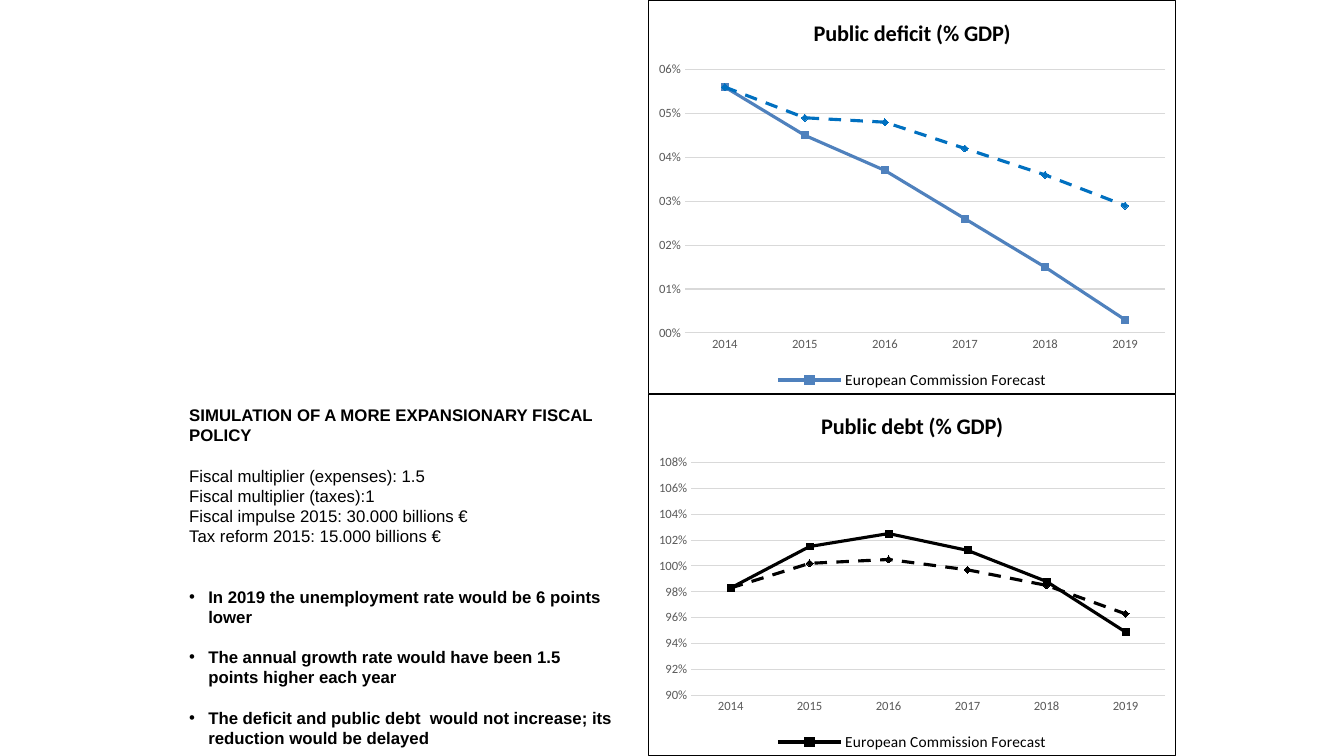
from dataclasses import dataclass

from lxml.etree import SubElement
from pptx import Presentation
from pptx.chart.data import CategoryChartData
from pptx.dml.color import RGBColor
from pptx.enum.chart import XL_CHART_TYPE as ChartType
from pptx.enum.chart import XL_LEGEND_POSITION as LegendPosition
from pptx.enum.chart import XL_TICK_MARK as TickMark
from pptx.enum.dml import MSO_LINE_DASH_STYLE as Dash
from pptx.oxml import parse_xml
from pptx.oxml.ns import nsdecls, qn
from pptx.util import Cm, Pt


@dataclass(frozen=True)
class Theme:
    text_font: str = "Arial"
    chart_font: str = "Calibri"
    black: str = "000000"
    white: str = "FFFFFF"
    axis_text: str = "595959"
    grid: str = "D9D9D9"
    forecast: str = "4F81BD"
    policy: str = "0070C0"
    text_size: float = 12
    title_size: float = 16
    legend_size: float = 11
    axis_size: float = 9
    thin: float = 0.75
    thick: float = 2.25
    line_gap: float = 14.4


def style_font(font, name, size, color, bold=False):
    font.name, font.size, font.bold = name, Pt(size), bold
    font.color.rgb = RGBColor.from_string(color)


def style_line(line, color, width):
    line.color.rgb = RGBColor.from_string(color)
    line.width = Pt(width)


def write_text(paragraph, text, font, size, color, bold=False, gap=0, bullet=False):
    paragraph.space_before = Pt(gap)
    run = paragraph.add_run()
    run.text = text
    style_font(run.font, font, size, color, bold)
    if bullet:
        properties = paragraph._p.get_or_add_pPr()
        properties.set("marL", str(Cm(0.48)))
        properties.set("indent", str(-Cm(0.48)))
        SubElement(properties, qn("a:buFont")).set("typeface", "Arial")
        SubElement(properties, qn("a:buChar")).set("char", "•")


class SlideBuilder:
    def __init__(self, slide, theme):
        self.slide, self.theme = slide, theme

    def text_box(self, left, top, width, height, lines):
        """Each line holds its text, the blank lines above it, and its format."""
        theme = self.theme
        shape = self.slide.shapes.add_textbox(Cm(left), Cm(top), Cm(width), Cm(height))
        frame = shape.text_frame
        frame.word_wrap = True
        for index, (text, gap_lines, options) in enumerate(lines):
            paragraph = frame.add_paragraph() if index else frame.paragraphs[0]
            write_text(paragraph, text, theme.text_font, theme.text_size, theme.black,
                       gap=gap_lines * theme.line_gap, **options)

    def line_chart(self, top, height, title, years, series, colors, limits=None):
        theme = self.theme
        data = CategoryChartData(number_format="0.0%")
        data.categories = years
        for name, values in series.items():
            data.add_series(name, values)
        chart = self.slide.shapes.add_chart(
            ChartType.LINE, Cm(16.33), Cm(top), Cm(13.31), Cm(height), data).chart
        style_font(chart.font, theme.chart_font, 10, theme.black)
        self.chart_frame(chart)

        # Title and legend, which lists the forecast only
        chart.has_title = True
        write_text(chart.chart_title.text_frame.paragraphs[0], title, theme.chart_font,
                   theme.title_size, theme.black, bold=True)
        chart.chart_title.include_in_layout = False
        chart.has_legend = True
        legend = chart.legend
        legend.position = LegendPosition.BOTTOM
        legend.include_in_layout = False
        style_font(legend.font, theme.chart_font, theme.legend_size, theme.black)
        entry = parse_xml(f'<c:legendEntry {nsdecls("c")}><c:idx val="1"/>'
                          '<c:delete val="1"/></c:legendEntry>')
        legend._element.find(qn("c:legendPos")).addnext(entry)

        # Axes
        for axis in (chart.category_axis, chart.value_axis):
            axis.major_tick_mark = axis.minor_tick_mark = TickMark.NONE
            style_font(axis.tick_labels.font, theme.chart_font, theme.axis_size, theme.axis_text)
        style_line(chart.category_axis.format.line, theme.grid, theme.thin)
        value_axis = chart.value_axis
        value_axis.format.line.fill.background()
        value_axis.has_major_gridlines = True
        style_line(value_axis.major_gridlines.format.line, theme.grid, theme.thin)
        value_axis.tick_labels.number_format = "#,#00%"
        value_axis.tick_labels.number_format_is_linked = False
        if limits:
            value_axis.minimum_scale, value_axis.maximum_scale = limits

        # Solid forecast, dashed alternative
        plot = chart.plots[0]
        plot.vary_by_categories = False
        for line, color, dash in zip(plot.series, colors, (Dash.SOLID, Dash.DASH)):
            line.smooth = False
            line.marker.style = None
            style_line(line.format.line, color, theme.thick)
            line.format.line.dash_style = dash

    def chart_frame(self, chart):
        theme = self.theme
        frame = parse_xml(
            f'<c:spPr {nsdecls("c", "a")}>'
            f'<a:solidFill><a:srgbClr val="{theme.white}"/></a:solidFill>'
            f'<a:ln w="{Pt(theme.thin)}"><a:solidFill><a:srgbClr val="{theme.black}"/>'
            '</a:solidFill></a:ln></c:spPr>')
        chart._chartSpace.find(qn("c:chart")).addnext(frame)


def main():
    presentation = Presentation()
    presentation.slide_width, presentation.slide_height = Cm(33.87), Cm(19.05)
    slide = presentation.slides.add_slide(presentation.slide_layouts[6])
    theme = Theme()
    builder = SlideBuilder(slide, theme)
    years = [str(year) for year in range(2014, 2020)]
    forecast, policy = "European Commission Forecast", "Expansionary fiscal policy"

    # Charts, one above the other
    split = 9.93
    builder.line_chart(
        split, 19.05 - split, "Public debt (% GDP)", years,
        {forecast: (0.983, 1.015, 1.025, 1.012, 0.988, 0.949),
         policy: (0.983, 1.002, 1.005, 0.997, 0.985, 0.963)},
        (theme.black, theme.black), limits=(0.9, 1.08))
    builder.line_chart(
        0, split, "Public deficit (% GDP)", years,
        {forecast: (0.056, 0.045, 0.037, 0.026, 0.015, 0.003),
         policy: (0.056, 0.049, 0.048, 0.042, 0.036, 0.029)},
        (theme.forecast, theme.policy))

    # Assumptions and findings
    heading, plain, finding = {"bold": True}, {}, {"bold": True, "bullet": True}
    builder.text_box(4.52, 10.08, 11.2, 8.97, [
        ("SIMULATION OF A MORE EXPANSIONARY FISCAL POLICY", 0, heading),
        ("Fiscal multiplier (expenses): 1.5", 1, plain),
        ("Fiscal multiplier (taxes):1", 0, plain),
        ("Fiscal impulse 2015: 30.000 billions €", 0, plain),
        ("Tax reform 2015: 15.000 billions €", 0, plain),
        ("In 2019 the unemployment rate would be 6 points lower", 2, finding),
        ("The annual growth rate would have been 1.5 points higher each year", 1, finding),
        ("The deficit and public debt  would not increase; its reduction would be delayed",
         1, finding),
    ])
    presentation.save("out.pptx")


if __name__ == "__main__":
    main()
